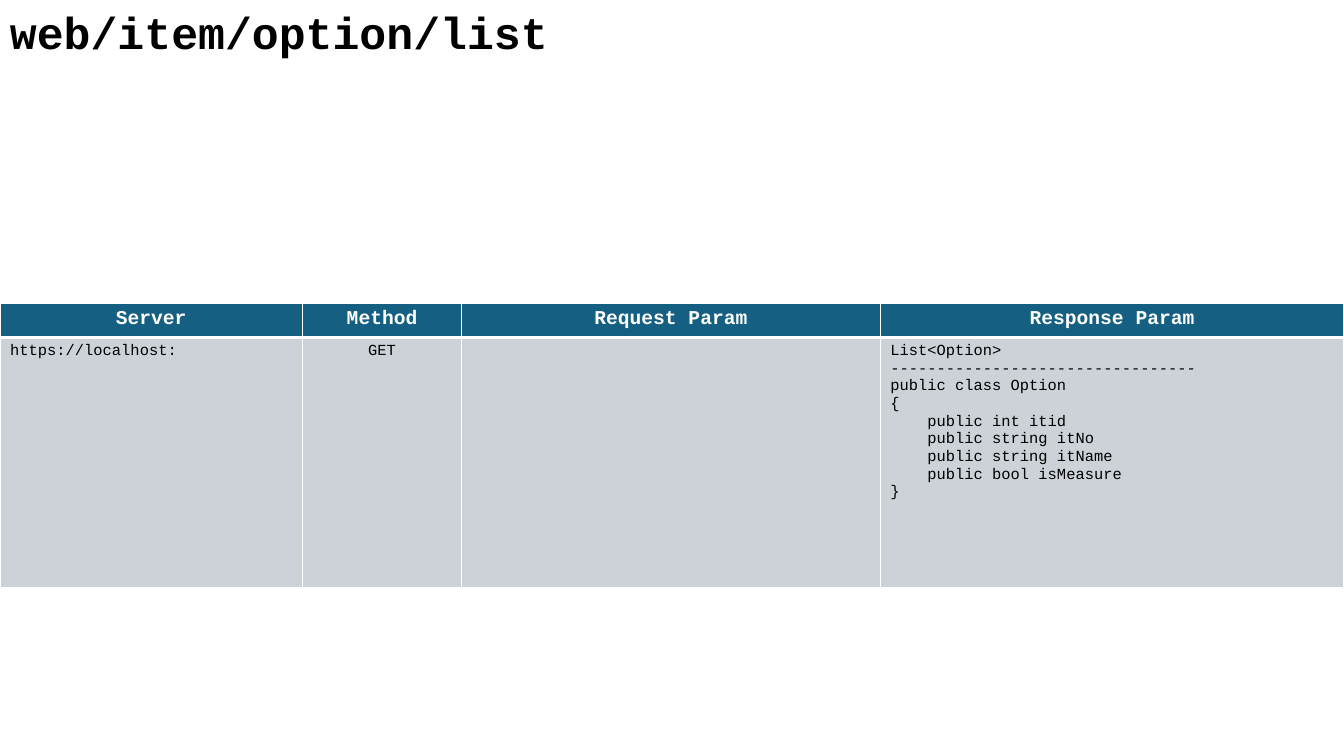
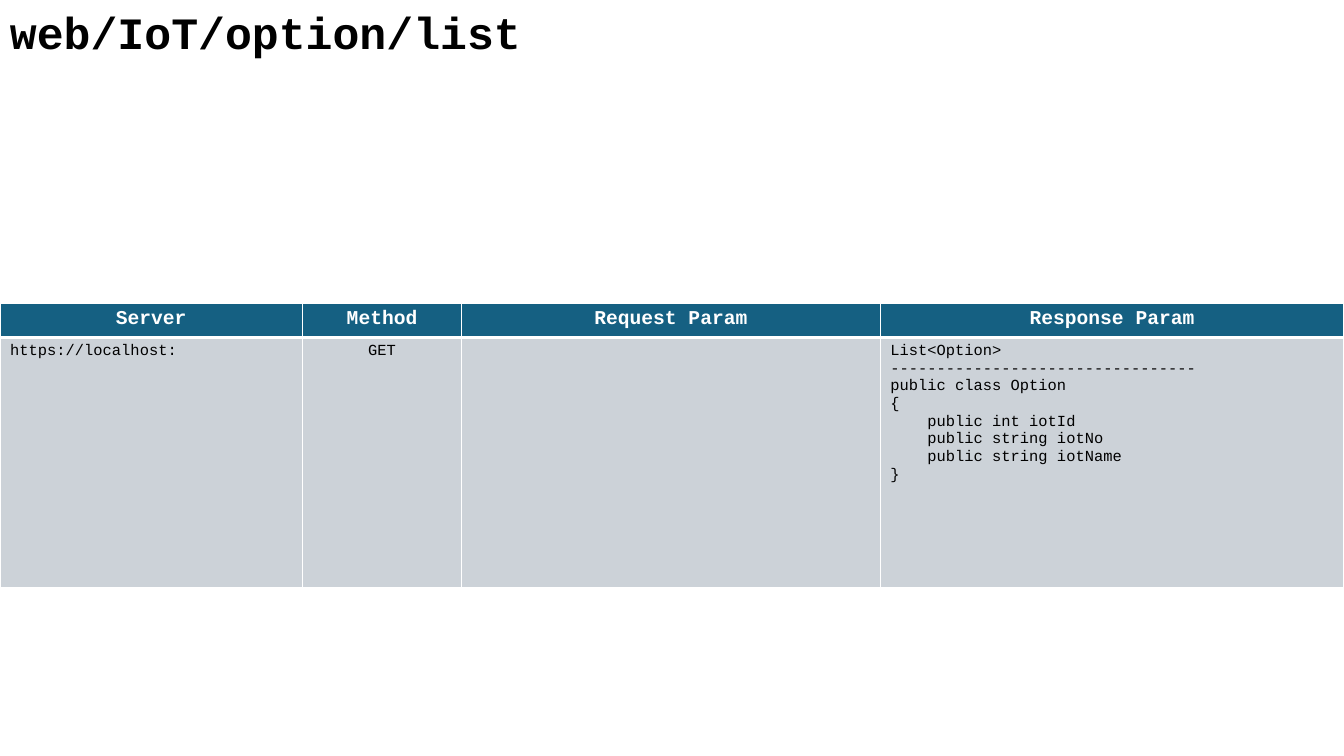
from lxml import etree
from pptx import Presentation
from pptx import util as u
from pptx.dml.color import RGBColor
from pptx.enum import text
from pptx.oxml import ns

FONT = "Courier New"
BLACK, WHITE = "000000", "FFFFFF"
HEADER_FILL, BODY_FILL = "156082", "CCD2D8"

COLUMN_WIDTHS = [3, 1.58, 4.15, 4.6]
HEADER_HEIGHT, BODY_HEIGHT = 0.34, 2.48
HEADERS = ["Server", "Method", "Request Param", "Response Param"]
SERVER = "https://localhost:"

ENDPOINTS = [
    ("web/item/option/list",
     ["int itid", "string itNo", "string itName", "bool isMeasure"]),
    ("web/IoT/option/list",
     ["int iotId", "string iotNo", "string iotName"]),
]


def color(value):
    return RGBColor.from_string(value)


def write(frame, content, size, fill=BLACK, bold=False, centered=False):
    """Fill a text frame, one paragraph for each line of content."""
    for index, line in enumerate(content.split("\n")):
        para = frame.add_paragraph() if index else frame.paragraphs[0]
        para.alignment = text.PP_ALIGN.CENTER if centered else text.PP_ALIGN.LEFT
        span = para.add_run()
        span.text = line
        span.font.name = FONT
        span.font.size = u.Pt(size)
        span.font.bold = bold
        span.font.color.rgb = color(fill)


def set_borders(cell, top=1, bottom=1):
    """Draw white cell borders, with widths in points."""
    properties = cell._tc.get_or_add_tcPr()
    for side, width in (("L", 1), ("R", 1), ("T", top), ("B", bottom)):
        line = etree.SubElement(properties, ns.qn(f"a:ln{side}"), w=str(u.Pt(width)))
        solid = etree.SubElement(line, ns.qn("a:solidFill"))
        etree.SubElement(solid, ns.qn("a:srgbClr"), val=WHITE)


def set_fill(cell, value):
    cell.fill.solid()
    cell.fill.fore_color.rgb = color(value)


def add_title(page, title):
    box = page.shapes.add_textbox(0, 0, u.Inches(9.45), u.Inches(0.64))
    box.text_frame.word_wrap = True
    box.text_frame.auto_size = text.MSO_AUTO_SIZE.SHAPE_TO_FIT_TEXT
    write(box.text_frame, title, size=32, bold=True)


def response_code(fields):
    members = [f"    public {field}" for field in fields]
    return "\n".join(["List<Option>", "-" * 33, "public class Option", "{", *members, "}"])


def add_endpoint_table(page, fields):
    frame = page.shapes.add_table(
        2, len(HEADERS), 0, u.Inches(3.01),
        u.Inches(sum(COLUMN_WIDTHS)), u.Inches(HEADER_HEIGHT + BODY_HEIGHT))
    table = frame.table
    table.rows[0].height = u.Inches(HEADER_HEIGHT)
    table.rows[1].height = u.Inches(BODY_HEIGHT)

    values = [SERVER, "GET", "", response_code(fields)]
    for index, (width, header, value) in enumerate(zip(COLUMN_WIDTHS, HEADERS, values)):
        table.columns[index].width = u.Inches(width)
        head, body = table.cell(0, index), table.cell(1, index)
        set_borders(head, bottom=3)
        set_fill(head, HEADER_FILL)
        write(head.text_frame, header, size=14, fill=WHITE, bold=True, centered=True)
        set_borders(body, top=3)
        set_fill(body, BODY_FILL)
        if value:
            write(body.text_frame, value, size=11, centered=header == "Method")


def main():
    deck = Presentation()
    deck.slide_width, deck.slide_height = u.Inches(13.33), u.Inches(7.5)
    for title, fields in ENDPOINTS:
        page = deck.slides.add_slide(deck.slide_layouts[6])
        add_title(page, title)
        add_endpoint_table(page, fields)
    deck.save("out.pptx")


if __name__ == "__main__":
    main()
